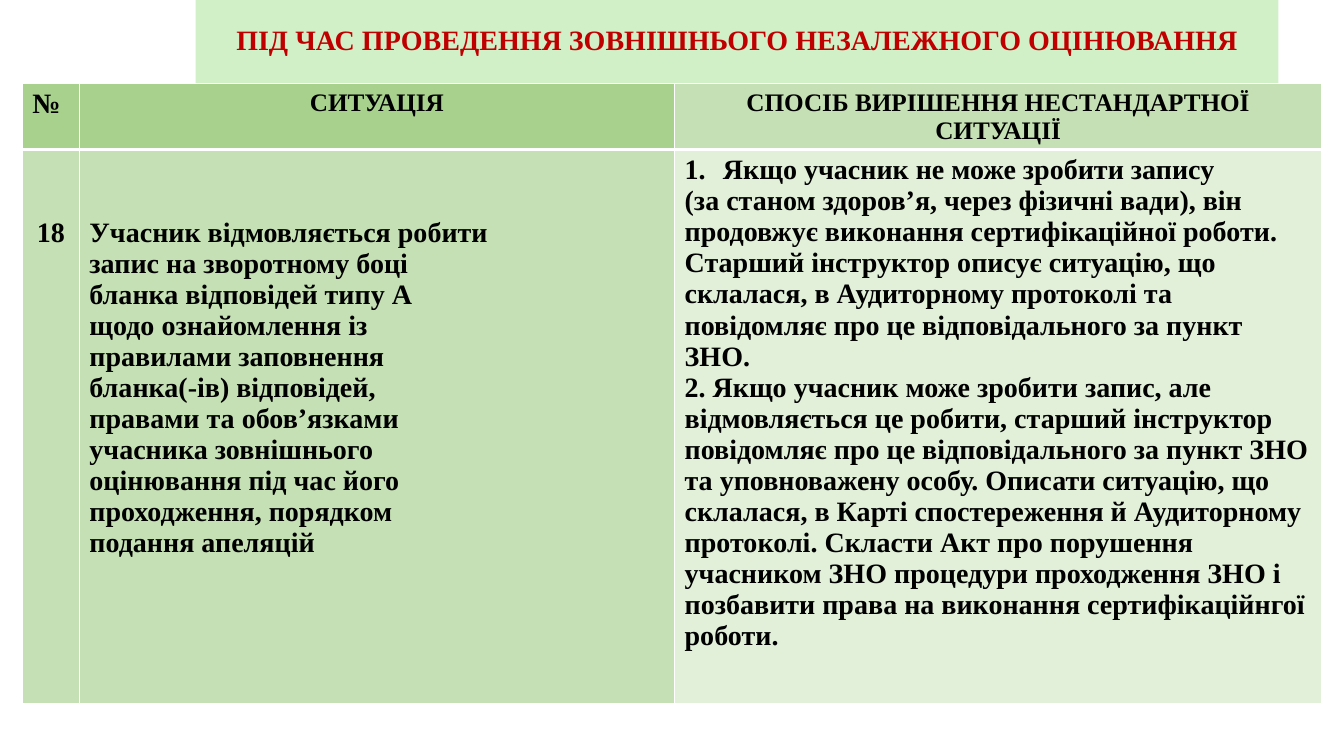
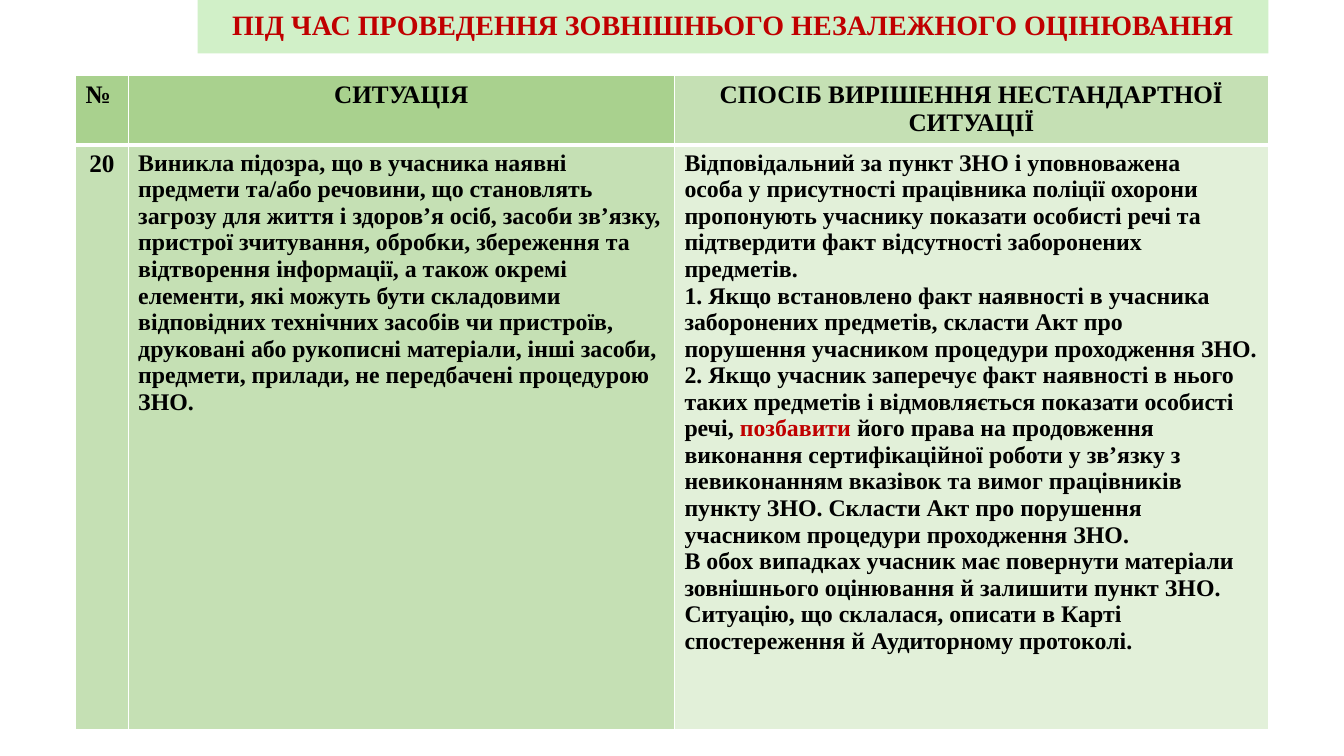
from lxml import etree
from pptx import Presentation
from pptx.dml.color import RGBColor
from pptx.enum.text import MSO_ANCHOR, MSO_AUTO_SIZE, PP_ALIGN
from pptx.oxml.ns import qn
from pptx.util import Emu, Inches, Pt

LEFT, CENTER = PP_ALIGN.LEFT, PP_ALIGN.CENTER
MIDDLE = MSO_ANCHOR.MIDDLE
NO_AUTOFIT = MSO_AUTO_SIZE.NONE

SLIDE_WIDTH, SLIDE_HEIGHT = Inches(13.33), Inches(7.5)
TITLE_ONLY = 5
FONT = "Times New Roman"
BLACK, WHITE, RED = "000000", "FFFFFF", "C00000"
TITLE_GREEN, DARK_GREEN, MID_GREEN, PALE_GREEN = "D1F0C8", "A9D18E", "C5E0B4", "E2F0D9"
ROW_FILLS = ((DARK_GREEN, DARK_GREEN, MID_GREEN), (MID_GREEN, MID_GREEN, PALE_GREEN))
ROW_ALIGNS = ((LEFT, CENTER, CENTER), (CENTER, LEFT, LEFT))
ROW_BORDERS = ({"lnL": 1, "lnR": 1, "lnT": 1, "lnB": 3}, {"lnL": 1, "lnR": 1, "lnT": 3, "lnB": 1})
COLUMN_SHARES = (4.4, 45.8, 49.8)
ROW_SHARES = (10.6, 89.4)
NUMBER_INDENT = Inches(0.38)

TITLE = "ПІД ЧАС ПРОВЕДЕННЯ ЗОВНІШНЬОГО НЕЗАЛЕЖНОГО ОЦІНЮВАННЯ"
HEADINGS = ("№", "СИТУАЦІЯ", "СПОСІБ ВИРІШЕННЯ НЕСТАНДАРТНОЇ СИТУАЦІЇ")

REFUSAL = {
    "title_box": (14.55, 0, 80.57, 11.07),
    "table_box": (1.65, 11.07, 96.7, 82),
    "sizes": ((20, 18, 18), (20, 20, 20)),
    "top_margins": (0.67, 0.67, 0.05),
    "numbered": True,
    "answers": (
        [["18"]],
        [["Учасник відмовляється робити\nзапис на зворотному боці\nбланка відповідей типу А\n"
          "щодо ознайомлення із\nправилами заповнення\nбланка(-ів) відповідей,\n"
          "правами та обов’язками\nучасника зовнішнього\nоцінювання під час його\n"
          "проходження, порядком\nподання апеляцій"]],
        [["Якщо учасник не може зробити запису"],
         ["(за станом здоров’я, через фізичні вади), він\n"
          "продовжує виконання сертифікаційної роботи. Старший інструктор описує ситуацію, "
          "що склалася, в Аудиторному протоколі та повідомляє про це відповідального за пункт ЗНО."],
         ["2. Якщо учасник може зробити запис, але\n"
          "відмовляється це робити, старший інструктор повідомляє про це відповідального за "
          "пункт ЗНО та уповноважену особу. Описати ситуацію, що склалася, в Карті спостереження "
          "й Аудиторному протоколі. Скласти Акт про порушення учасником ЗНО процедури "
          "проходження ЗНО і позбавити права на виконання сертифікаційнгої роботи."]],
    ),
}

SUSPICION = {
    "title_box": (14.7, 0, 79.67, 7.07),
    "table_box": (5.63, 10, 88.75, 86.53),
    "sizes": ((18, 18, 18), (18, 17, 17)),
    "top_margins": (0.05, 0.05, 0.05),
    "numbered": False,
    "answers": (
        [["20"]],
        [["Виникла підозра, що в учасника наявні предмети та/або речовини, що становлять загрозу "
          "для життя і здоров’я осіб, засоби зв’язку, пристрої зчитування, обробки, збереження та "
          "відтворення інформації, а також окремі елементи, які можуть бути складовими відповідних "
          "технічних засобів чи пристроїв, друковані або рукописні матеріали, інші засоби, "
          "предмети, прилади, не передбачені процедурою ЗНО."]],
        [["Відповідальний за пункт ЗНО і уповноважена\n"
          "особа у присутності працівника поліції охорони пропонують учаснику показати особисті "
          "речі та підтвердити факт відсутності заборонених предметів.\n"
          "1. Якщо встановлено факт наявності в учасника заборонених предметів, скласти Акт про\n"
          "порушення учасником процедури проходження ЗНО.\n"
          "2. Якщо учасник заперечує факт наявності в нього таких предметів і відмовляється "
          "показати особисті речі, ",
          ("позбавити ", RED),
          "його права на продовження виконання сертифікаційної роботи у зв’язку з невиконанням "
          "вказівок та вимог працівників пункту ЗНО. Скласти Акт про порушення учасником "
          "процедури проходження ЗНО.\n"
          "В обох випадках учасник має повернути матеріали зовнішнього оцінювання й залишити "
          "пункт ЗНО. Ситуацію, що склалася, описати в Карті спостереження й Аудиторному протоколі."]],
    ),
}


def set_attributes(target, values):
    """Set every named attribute of the target."""
    for name, value in values.items():
        setattr(target, name, value)


def paint(fill, color):
    """Make a fill solid in a hex colour."""
    fill.solid()
    fill.fore_color.rgb = RGBColor.from_string(color)


def slide_box(shares):
    """Turn percentages of the slide into left, top, width and height."""
    sides = (SLIDE_WIDTH, SLIDE_HEIGHT) * 2
    return [Emu(round(side * share / 100)) for side, share in zip(sides, shares)]


def write_run(paragraph, text, size, color):
    """Add bold text to a paragraph, with a line break at each newline."""
    for index, line in enumerate(text.split("\n")):
        if index:
            paragraph.add_line_break()
        run = paragraph.add_run()
        run.text = line
        set_attributes(run.font, {"name": FONT, "size": Pt(size), "bold": True})
        run.font.color.rgb = RGBColor.from_string(color)


def number_paragraph(paragraph):
    """Give a paragraph an automatic number and a hanging indent."""
    properties = paragraph._p.get_or_add_pPr()
    properties.set("marL", str(NUMBER_INDENT))
    properties.set("indent", str(-NUMBER_INDENT))
    etree.SubElement(properties, qn("a:buFont"), typeface="+mj-lt")
    etree.SubElement(properties, qn("a:buAutoNum"), type="arabicPeriod")


def draw_borders(cell, widths):
    """Draw white borders of the given widths around a cell."""
    properties = cell._tc.get_or_add_tcPr()
    for side, width in widths.items():
        border = etree.SubElement(properties, qn(f"a:{side}"), w=str(Pt(width)))
        solid = etree.SubElement(border, qn("a:solidFill"))
        etree.SubElement(solid, qn("a:srgbClr"), val=WHITE)


def fill_cell(cell, paragraphs, size, align, numbered=False):
    """Write paragraphs, each a list of plain or coloured texts, into a cell."""
    frame = cell.text_frame
    for index, pieces in enumerate(paragraphs):
        paragraph = frame.add_paragraph() if index else frame.paragraphs[0]
        if numbered and index == 0:
            number_paragraph(paragraph)
        paragraph.alignment = align
        for piece in pieces:
            text, color = (piece, BLACK) if isinstance(piece, str) else piece
            write_run(paragraph, text, size, color)


def place_title(slide, shares):
    """Place the red heading on its green band."""
    title = slide.shapes.title
    left, top, width, height = slide_box(shares)
    set_attributes(title, {"left": left, "top": top, "width": width, "height": height})
    paint(title.fill, TITLE_GREEN)
    set_attributes(title.text_frame, {
        "word_wrap": True, "auto_size": NO_AUTOFIT, "vertical_anchor": MIDDLE})
    paragraph = title.text_frame.paragraphs[0]
    set_attributes(paragraph, {"alignment": CENTER, "line_spacing": 0.9})
    write_run(paragraph, TITLE, 20, RED)


def place_table(slide, situation):
    """Place the table of one situation and its solution in its box."""
    left, top, width, height = slide_box(situation["table_box"])
    table = slide.shapes.add_table(2, 3, left, top, width, height).table
    for column, share in zip(table.columns, COLUMN_SHARES):
        column.width = Emu(round(width * share / 100))
    for row, share in zip(table.rows, ROW_SHARES):
        row.height = Emu(round(height * share / 100))
    contents = ([[[heading]] for heading in HEADINGS], situation["answers"])
    for row, texts in enumerate(contents):
        for column, paragraphs in enumerate(texts):
            cell = table.cell(row, column)
            draw_borders(cell, ROW_BORDERS[row])
            paint(cell.fill, ROW_FILLS[row][column])
            if row:
                cell.margin_top = Inches(situation["top_margins"][column])
            fill_cell(cell, paragraphs, situation["sizes"][row][column],
                      ROW_ALIGNS[row][column],
                      situation["numbered"] and (row, column) == (1, 2))


def add_situation_slide(presentation, situation):
    """Add a slide with the heading and the table of one situation."""
    slide = presentation.slides.add_slide(presentation.slide_layouts[TITLE_ONLY])
    place_title(slide, situation["title_box"])
    place_table(slide, situation)


def main():
    """Build and save the presentation."""
    presentation = Presentation()
    set_attributes(presentation, {"slide_width": SLIDE_WIDTH, "slide_height": SLIDE_HEIGHT})
    for situation in (REFUSAL, SUSPICION):
        add_situation_slide(presentation, situation)
    presentation.save("out.pptx")


if __name__ == "__main__":
    main()
